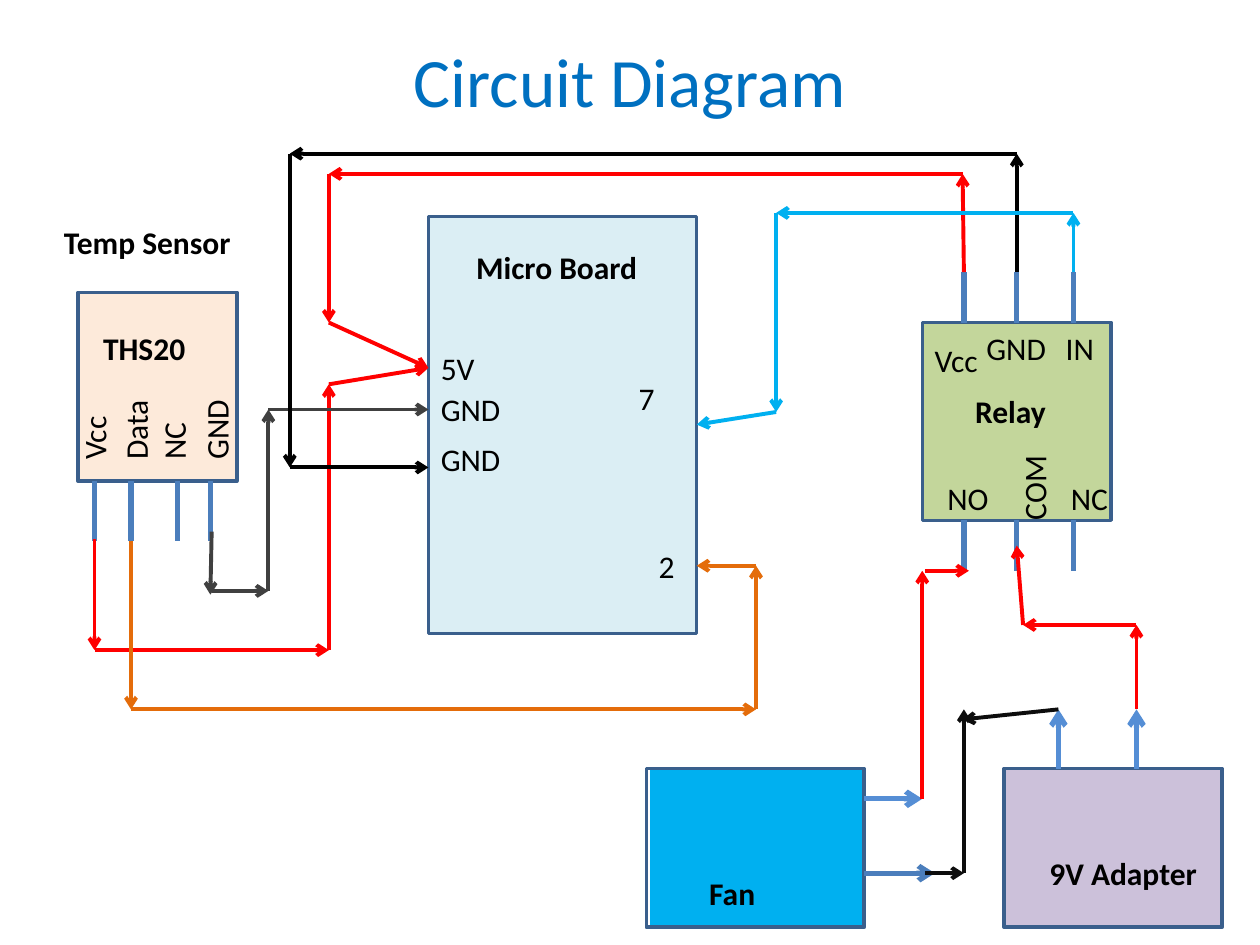
import itertools

import lxml.etree
import pptx
import pptx.dml.color
import pptx.enum.shapes
import pptx.enum.text
import pptx.oxml.ns
import pptx.util

SCALE = 9144  # EMU per px, 100 px to the inch

THEME = {
    "font": "Calibri",
    "title_size": 39.6, "label_size": 18,
    "outline_width": 2, "pin_width": 3, "wire_width": 2.25,
    "title": "0070C0", "text": "000000", "outline": "3A5F8C",
    "pin": "4B7EBC", "power_pin": "558ED5",
    "controller": "DBEEF4", "sensor": "FDEADA", "relay": "C3D69B",
    "fan": "00B0F0", "adapter": "CCC1DA",
    "supply": "FF0000", "data": "E46C0A", "sensor_ground": "404040",
    "ground": "000000", "signal": "00B0F0", "return": "0D0D0D",
}

# Each wire is a chain of arrows through its points.
WIRES = [
    ("supply", [(75, 428), (75, 516), (261, 516), (261, 305), (340, 292)]),
    ("supply", [(765, 216), (764, 138), (261, 138), (261, 256), (340, 292)]),
    ("data", [(104, 429), (104, 563), (600, 563), (600, 449), (553, 449)]),
    ("sensor_ground", [(168, 422), (167, 472)]),
    ("sensor_ground", [(168, 469), (213, 469), (213, 325), (340, 325)]),
    ("ground", [(807, 216), (807, 122), (230, 122), (230, 371), (340, 371)]),
    ("signal", [(852, 216), (852, 169), (616, 169), (616, 327), (553, 337)]),
    ("supply", [(902, 563), (902, 496), (812, 496), (807, 433)]),
    ("supply", [(732, 634), (732, 453)]),
    ("supply", [(734, 453), (769, 453)]),
    ("return", [(734, 693), (765, 693), (765, 563)]),
    ("return", [(840, 563), (764, 571)]),
]


def emu(px):
    return pptx.util.Emu(px * SCALE)


def color(name):
    return pptx.dml.color.RGBColor.from_string(THEME[name])


def set_all(target, formats):
    for name, value in formats.items():
        setattr(target, name, value)


def add_label(page, origin, box, text, bold=False, turned=False, wrap=True):
    """Add a text box whose box is relative to origin."""
    left, top, width, height = box
    label = page.shapes.add_textbox(
        emu(origin[0] + left), emu(origin[1] + top), emu(width), emu(height))
    label.rotation = 270 if turned else 0
    label.text_frame.word_wrap = wrap
    span = label.text_frame.paragraphs[0].add_run()
    span.text = text
    set_all(span.font, {"name": THEME["font"], "bold": bold,
                        "size": pptx.util.Pt(THEME["label_size"])})
    span.font.color.rgb = color("text")
    return label


def add_block(page, box, fill=None, outlined=True):
    block = page.shapes.add_shape(
        pptx.enum.shapes.MSO_SHAPE.RECTANGLE, *map(emu, box))
    block.shadow.inherit = False
    if fill:
        block.fill.solid()
        block.fill.fore_color.rgb = color(fill)
    else:
        block.fill.background()
    if outlined:
        block.line.color.rgb = color("outline")
        block.line.width = pptx.util.Pt(THEME["outline_width"])
    else:
        block.line.fill.background()


def add_line(page, origin, start, end, tint, width, arrow=True):
    """Add a straight line between two points relative to origin."""
    ends = [emu(base + step) for point in (start, end)
            for base, step in zip(origin, point)]
    line = page.shapes.add_connector(
        pptx.enum.shapes.MSO_CONNECTOR.STRAIGHT, *ends)
    line.line.color.rgb = color(tint)
    line.line.width = pptx.util.Pt(THEME[width])
    qn = pptx.oxml.ns.qn
    properties = line._element.spPr
    if arrow:
        lxml.etree.SubElement(
            properties.find(qn("a:ln")), qn("a:tailEnd"), type="arrow")
    lxml.etree.SubElement(properties, qn("a:effectLst"))


def add_pins(page, origin, columns, top, bottom):
    for column in columns:
        add_line(page, origin, (column, top), (column, bottom),
                 "pin", "pin_width", arrow=False)


def draw_title(page, box):
    title = add_label(page, box[:2], (0, 0, *box[2:]), "Circuit Diagram")
    set_all(title.text_frame, {
        "margin_top": 0,
        "vertical_anchor": pptx.enum.text.MSO_ANCHOR.TOP})
    para = title.text_frame.paragraphs[0]
    para.alignment = pptx.enum.text.PP_ALIGN.CENTER
    para.runs[0].font.size = pptx.util.Pt(THEME["title_size"])
    para.runs[0].font.color.rgb = color("title")


def draw_controller(page, box):
    add_block(page, box, "controller")
    add_label(page, box, (28, 20, 161, 40), "Micro Board", bold=True)
    for text, place in [("5V", (0, 100, 55, 40)),
                        ("GND", (0, 133, 76, 40)),
                        ("GND", (0, 172, 92, 71)),
                        ("7", (157, 124, 49, 40))]:
        add_label(page, box, place, text)
    add_label(page, box, (173, 257, 33, 40), "2", wrap=False)


def draw_sensor(page, box):
    height = box[3]
    add_block(page, box, "sensor")
    add_pins(page, box, (13, 42, 79, 105), height, height + 47)
    add_label(page, box, (-21, -60, 173, 40), "Temp Sensor", bold=True)
    add_label(page, box, (10, 24, 94, 40), "THS20", bold=True)
    for text, place in [("Vcc", (-32, 78, 89, 40)),
                        ("Data", (-4, 73, 99, 40)),
                        ("NC", (36, 83, 79, 40)),
                        ("GND", (70, 83, 79, 40))]:
        add_label(page, box, place, text, turned=True)


def draw_relay(page, box):
    height = box[3]
    columns = (33, 75, 120)
    add_block(page, box, "relay")
    add_pins(page, box, columns, 0, -40)
    add_pins(page, box, columns, height, height + 40)
    add_label(page, box, (32, 50, 117, 40), "Relay", bold=True)
    for text, place in [("Vcc", (0, 10, 65, 40)),
                        ("GND", (41, 0, 79, 40)),
                        ("IN", (104, 0, 46, 40)),
                        ("NO", (10, 119, 55, 40)),
                        ("NC", (108, 119, 61, 40))]:
        add_label(page, box, place, text)
    add_label(page, box, (41, 99, 95, 40), "COM", turned=True)


def draw_fan(page, box):
    left, top, width, height = box
    add_block(page, (left + 3, top, width - 5, height), "fan", outlined=False)
    add_block(page, box)
    add_label(page, box, (40, 79, 79, 40), "Fan", bold=True)
    for row, length, tint in [(24, 46, "power_pin"), (83, 56, "pin")]:
        add_line(page, box, (width, row), (width + length, row),
                 tint, "pin_width")


def draw_adapter(page, box):
    add_block(page, box, "adapter")
    add_label(page, box, (26, 63, 138, 40), "9V Adapter", bold=True, wrap=False)
    for column in (43, 105):
        add_line(page, box, (column, 0), (column, -47),
                 "power_pin", "pin_width")


def draw_wiring(page, box):
    for tint, points in WIRES:
        for start, end in itertools.pairwise(points):
            add_line(page, box, start, end, tint, "wire_width")


def main():
    deck = pptx.Presentation()
    set_all(deck, {"slide_width": emu(1000), "slide_height": emu(750)})
    page = deck.slides.add_slide(deck.slide_layouts[6])
    draw_title(page, (50, 30, 900, 125))
    draw_controller(page, (340, 172, 213, 331))
    draw_sensor(page, (62, 232, 126, 150))
    draw_relay(page, (732, 256, 150, 157))
    draw_fan(page, (513, 610, 173, 126))
    draw_adapter(page, (797, 610, 173, 126))
    draw_wiring(page, (0, 0, 1000, 750))
    deck.save("out.pptx")


if __name__ == "__main__":
    main()
